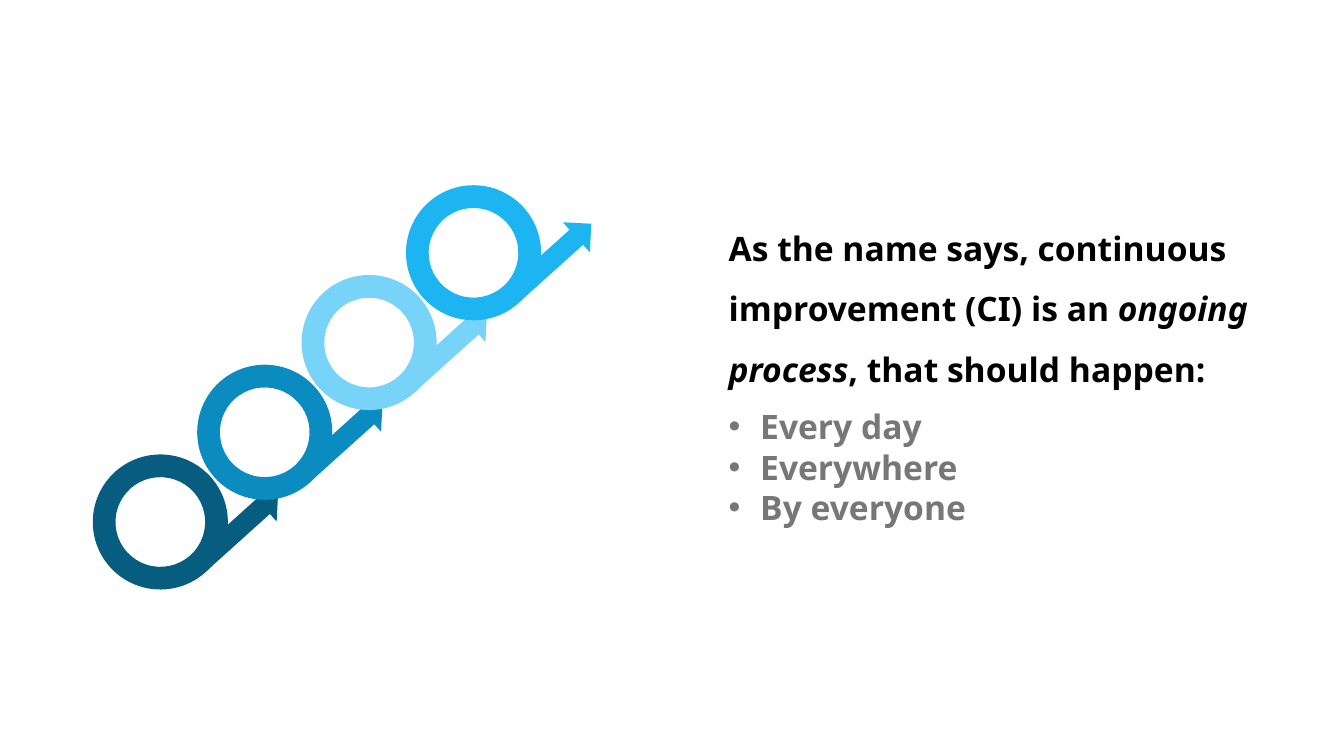
import pptx
import pptx.util
import pptx.dml.color
import pptx.enum.shapes
import pptx.enum.text
import lxml.etree

Pt = pptx.util.Pt
MSO_SHAPE = pptx.enum.shapes.MSO_SHAPE
COLORS = {
    "navy": "075D80",
    "blue": "0B8CC0",
    "pale": "77D3F7",
    "bright": "1CB5F2",
    "heading": "000000",
    "bullet": "777777",
}
FONT = "Noto Sans"


def rgb(name):
    """Return the named colour."""
    return pptx.dml.color.RGBColor.from_string(COLORS[name])


def add_part(slide, kind, box, color):
    """Add a tilted, plainly filled shape in box."""
    sp = slide.shapes.add_shape(kind, *map(Pt, box))
    sp.rotation = 318
    sp.shadow.inherit = False
    sp.fill.solid()
    sp.fill.fore_color.rgb = rgb(color)
    sp.line.fill.background()
    return sp


def add_loops(slide, left, top, width, height):
    """Draw rings with arrows climbing from lower left to upper right of the box."""
    ring, arrow_w, arrow_h = 96.5, 77, 28.8
    arrow_dx, arrow_dy = 65.3, 38.9
    steps = ["navy", "blue", "pale", "bright"]
    gaps = len(steps) - 1
    dx = (width - arrow_dx - arrow_w) / gaps
    dy = (height - ring) / gaps
    for i, color in enumerate(steps):
        x = left + i * dx
        y = top + (gaps - i) * dy
        sp = add_part(slide, MSO_SHAPE.DONUT, (x, y, ring, ring), color)
        sp.adjustments[0] = 0.168
        arrow = (x + arrow_dx, y + arrow_dy, arrow_w, arrow_h)
        add_part(slide, MSO_SHAPE.RIGHT_ARROW, arrow, color)


def add_text(slide, left, top, width, height, wrap):
    """Add an empty text box and return its text frame."""
    sp = slide.shapes.add_textbox(Pt(left), Pt(top), Pt(width), Pt(height))
    tf = sp.text_frame
    tf.word_wrap = wrap
    return tf


def add_run(p, text, color, italic=False):
    """Add a bold run to the paragraph."""
    r = p.add_run()
    r.text = text
    r.font.name = FONT
    r.font.size = Pt(24)
    r.font.bold = True
    r.font.italic = italic
    r.font.color.rgb = rgb(color)


def add_heading(slide, left, top, width, height):
    """Write the opening statement with its italic phrase."""
    tf = add_text(slide, left, top, width, height, True)
    tf.vertical_anchor = pptx.enum.text.MSO_ANCHOR.MIDDLE
    p = tf.paragraphs[0]
    p.line_spacing = 1.5
    add_run(p, "As the name says, continuous improvement (CI) is an ", "heading")
    add_run(p, "ongoing process", "heading", italic=True)
    add_run(p, ", that should happen:", "heading")


def add_bullets(slide, left, top, width, height):
    """Write the bulleted list."""
    tf = add_text(slide, left, top, width, height, False)
    tf.auto_size = pptx.enum.text.MSO_AUTO_SIZE.SHAPE_TO_FIT_TEXT
    for i, text in enumerate(["Every day", "Everywhere", "By everyone"]):
        p = tf.add_paragraph() if i else tf.paragraphs[0]
        add_run(p, text, "bullet")
        pPr = p._p.get_or_add_pPr()
        pPr.set("marL", str(Pt(22.5)))
        pPr.set("indent", str(-Pt(22.5)))
        ns = pptx.oxml.ns.qn
        lxml.etree.SubElement(pPr, ns("a:buFont")).set("typeface", "Arial")
        lxml.etree.SubElement(pPr, ns("a:buChar")).set("char", "•")


def main():
    """Build and save the slide."""
    prs = pptx.Presentation()
    prs.slide_width, prs.slide_height = Pt(960), Pt(540)
    slide = prs.slides.add_slide(prs.slide_layouts[6])
    add_loops(slide, 66.3, 132.3, 366, 288.8)
    add_heading(slide, 513.4, 145.4, 429, 135.4)
    add_bullets(slide, 513.4, 286.6, 185.8, 94.3)
    prs.save("out.pptx")


if __name__ == "__main__":
    main()
